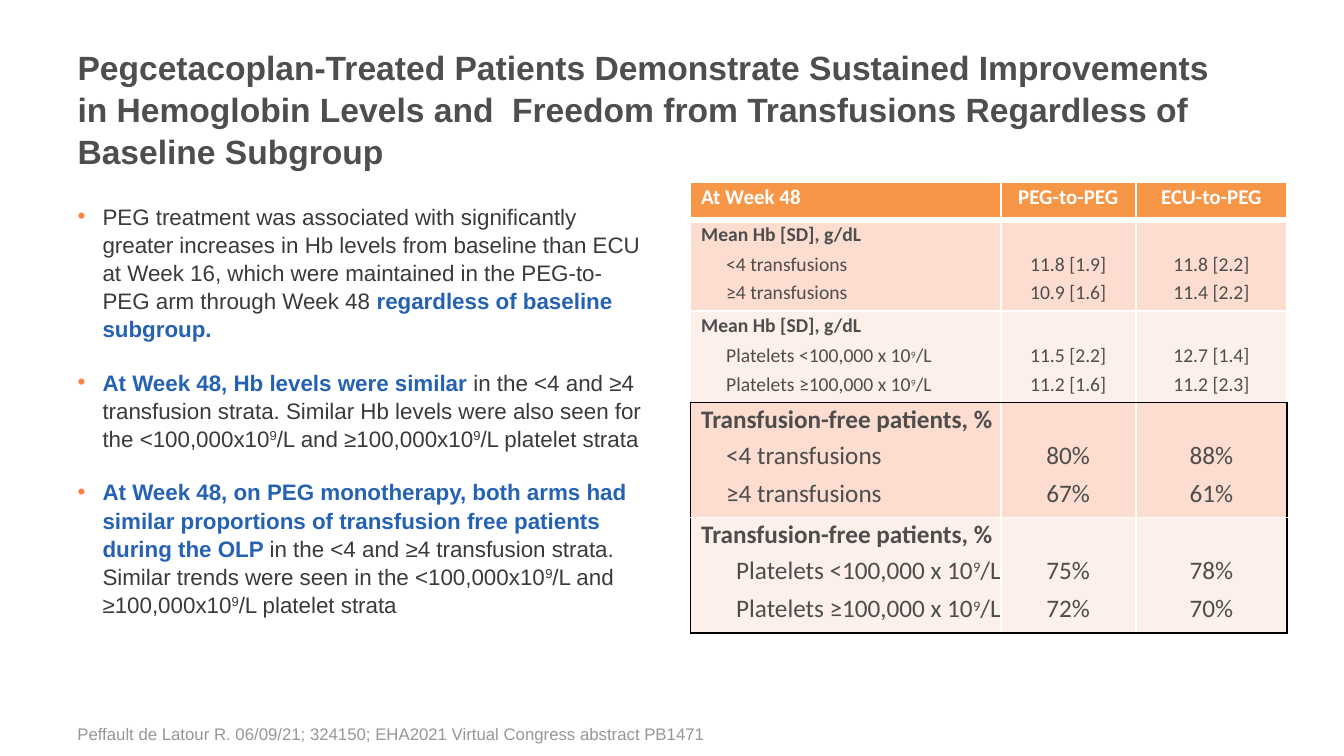
import pptx
import pptx.util
import pptx.dml.color
import pptx.enum.text
import pptx.oxml
import pptx.oxml.ns
from lxml import etree

Cm = pptx.util.Cm
Pt = pptx.util.Pt
ALIGN = pptx.enum.text.PP_ALIGN
ANCHOR = pptx.enum.text.MSO_ANCHOR

HUE = {
    "title": "4D4E4D", "body": "3A3A3A", "key": "2662B4", "dot": "FF7F40",
    "note": "979797", "cell": "4D4D4D", "head": "F79646", "dark": "FCDDCF",
    "pale": "FDEFE9", "white": "FFFFFF", "black": "000000",
}
TITLE = ("Pegcetacoplan-Treated Patients Demonstrate Sustained Improvements in "
         "Hemoglobin Levels and  Freedom from Transfusions Regardless of Baseline Subgroup")
POINTS = [
    "PEG treatment was associated with significantly greater increases in Hb levels "
    "from baseline than ECU at Week 16, which were maintained in the PEG-to-PEG arm "
    "through Week 48 *regardless of baseline subgroup.*",
    "*At Week 48, Hb levels were similar *in the <4 and ≥4 transfusion strata. Similar "
    "Hb levels were also seen for the <100,000x10^9^/L and ≥100,000x10^9^/L platelet strata",
    "*At Week 48, on PEG monotherapy, both arms had similar proportions of transfusion "
    "free patients during the OLP *in the <4 and ≥4 transfusion strata. Similar trends "
    "were seen in the <100,000x10^9^/L and ≥100,000x10^9^/L platelet strata",
]
NOTE = "Peffault de Latour R. 06/09/21; 324150; EHA2021 Virtual Congress abstract PB1471"
HEAD = ["*At Week 48*", "*PEG-to-PEG*", "*ECU-to-PEG*"]
DOSES = ["<4 transfusions", "≥4 transfusions"]
PLATES = ["Platelets <100,000 x 10^9^/L", "Platelets ≥100,000 x 10^9^/L"]
HB = "*Mean Hb [SD], g/dL*"
FREE = "*Transfusion-free patients, %*"
GROUPS = [
    (HB, DOSES, [("11.8 [1.9]", "11.8 [2.2]"), ("10.9 [1.6]", "11.4 [2.2]")]),
    (HB, PLATES, [("11.5 [2.2]", "12.7 [1.4]"), ("11.2 [1.6]", "11.2 [2.3]")]),
    (FREE, DOSES, [("80%", "88%"), ("67%", "61%")]),
    (FREE, PLATES, [("75%", "78%"), ("72%", "70%")]),
]
COLS = [7.82, 3.4, 3.82]


def rgb(name):
    return pptx.dml.color.RGBColor.from_string(HUE[name])


def write(para, text, size, font, tint, key=None, small=None):
    for i, chunk in enumerate(text.split("*")):
        for j, bit in enumerate(chunk.split("^")):
            if not bit:
                continue
            run = para.add_run()
            run.text = bit
            bold, sup = i % 2 == 1, j % 2 == 1
            run.font.name = font
            run.font.size = Pt(small if sup and small else size)
            run.font.bold = bold
            run.font.color.rgb = rgb(key if bold and key else tint)
            if sup:
                run.font._element.set("baseline", "30000" if key else "25000")


def place(shape, left, top, width, height):
    shape.left, shape.top = Cm(left), Cm(top)
    shape.width, shape.height = Cm(width), Cm(height)
    frame = shape.text_frame
    frame.word_wrap = True
    frame.auto_size = pptx.enum.text.MSO_AUTO_SIZE.NONE
    return frame


def add_title(slide):
    frame = place(slide.shapes.title, 1.7, 1.07, 29.85, 3.3)
    frame.vertical_anchor = ANCHOR.MIDDLE
    para = frame.paragraphs[0]
    para.alignment = ALIGN.LEFT
    para.line_spacing = 1.05
    write(para, f"*{TITLE}*", 24, "Arial", "title")


def add_dot(para):
    props = para._p.get_or_add_pPr()
    props.set("marL", str(Cm(0.63)))
    props.set("indent", str(Cm(-0.63)))
    tint = etree.SubElement(props, pptx.oxml.ns.qn("a:buClr"))
    etree.SubElement(tint, pptx.oxml.ns.qn("a:srgbClr"), val=HUE["dot"])
    etree.SubElement(props, pptx.oxml.ns.qn("a:buChar"), char="•")


def add_list(slide):
    frame = place(slide.placeholders[1], 1.7, 4.95, 14.78, 13.1)
    for i, text in enumerate(POINTS):
        para = frame.add_paragraph() if i else frame.paragraphs[0]
        add_dot(para)
        para.space_before = Pt(18 if i else 0)
        para.line_spacing = 1.05
        write(para, text, 16, "Arial", "body", "key")


def add_note(slide):
    box = slide.shapes.add_textbox(0, 0, 0, 0)
    frame = place(box, 1.7, 17.65, 29.85, 1.22)
    frame.vertical_anchor = ANCHOR.BOTTOM
    write(frame.paragraphs[0], NOTE, 12, "Arial", "note")


def set_edge(cell, side, tint, width=1.5):
    props = cell._tc.get_or_add_tcPr()
    line = etree.SubElement(props, pptx.oxml.ns.qn(f"a:ln{side}"), w=str(Pt(width)))
    if tint is None:
        etree.SubElement(line, pptx.oxml.ns.qn("a:noFill"))
        return
    fill = etree.SubElement(line, pptx.oxml.ns.qn("a:solidFill"))
    etree.SubElement(fill, pptx.oxml.ns.qn("a:srgbClr"), val=HUE[tint])


def set_edges(cell, row, col):
    framed = row > 6
    set_edge(cell, "L", "black" if framed and col == 0 else "white")
    set_edge(cell, "R", "black" if framed and col == 2 else "white")
    for side, line in (("T", row), ("B", row + 1)):
        if line in (7, 13):
            set_edge(cell, side, "black")
        elif line == 1:
            set_edge(cell, side, "white", 4.5)
        else:
            set_edge(cell, side, "white" if line % 3 == 1 or line == 0 else None)


def set_cell(cell, text, size, tint, fill, lead, pad, left, align):
    cell.margin_left = cell.margin_right = cell.margin_bottom = 0
    cell.margin_top = Cm(pad)
    cell.fill.solid()
    cell.fill.fore_color.rgb = rgb(fill)
    para = cell.text_frame.paragraphs[0]
    para.alignment = align
    if lead:
        para.line_spacing = Pt(lead)
    if left:
        para._p.get_or_add_pPr().set("marL", str(Cm(left)))
    write(para, text, size, "Calibri", tint, small=12 if size == 14 else None)


def add_grid(slide):
    rows = [HEAD]
    for head, names, pairs in GROUPS:
        rows.append([head, "", ""])
        rows += [[name, *pair] for name, pair in zip(names, pairs)]
    highs = [0.97] + [0.83, 0.72, 0.72] * 2 + [1.0, 0.95, 0.95] * 2
    frame = slide.shapes.add_table(len(rows), 3, Cm(17.4), Cm(4.58),
                                   Cm(sum(COLS)), Cm(sum(highs)))
    grid = frame.table
    for col, width in zip(grid.columns, COLS):
        col.width = Cm(width)
    for r, (texts, high) in enumerate(zip(rows, highs)):
        grid.rows[r].height = Cm(high)
        top = r % 3 == 1
        big = r > 6
        if r == 0:
            size, tint, fill, lead = 15, "white", "head", None
        else:
            size, tint = 18 if big else 14, "cell"
            fill = "pale" if (r - 1) // 3 % 2 else "dark"
            lead = (21.2, 20.5, 20.8)[(r - 1) % 3] if big else 16.8 if top else 16
        for c, text in enumerate(texts):
            cell = grid.cell(r, c)
            set_edges(cell, r, c)
            left, align = 0, ALIGN.CENTER
            if c == 0:
                flush = r > 10
                align = ALIGN.RIGHT if flush else ALIGN.LEFT
                left = 0.27 if top or r == 0 else 0 if flush else 0.9
            pad = 0.08 if top or r == 0 else 0
            set_cell(cell, text, size, tint, fill, lead, pad, left, align)


def main():
    deck = pptx.Presentation()
    deck.slide_width, deck.slide_height = Cm(33.87), Cm(19.05)
    slide = deck.slides.add_slide(deck.slide_layouts[1])
    add_title(slide)
    add_list(slide)
    add_grid(slide)
    add_note(slide)
    deck.save("out.pptx")


if __name__ == "__main__":
    main()
